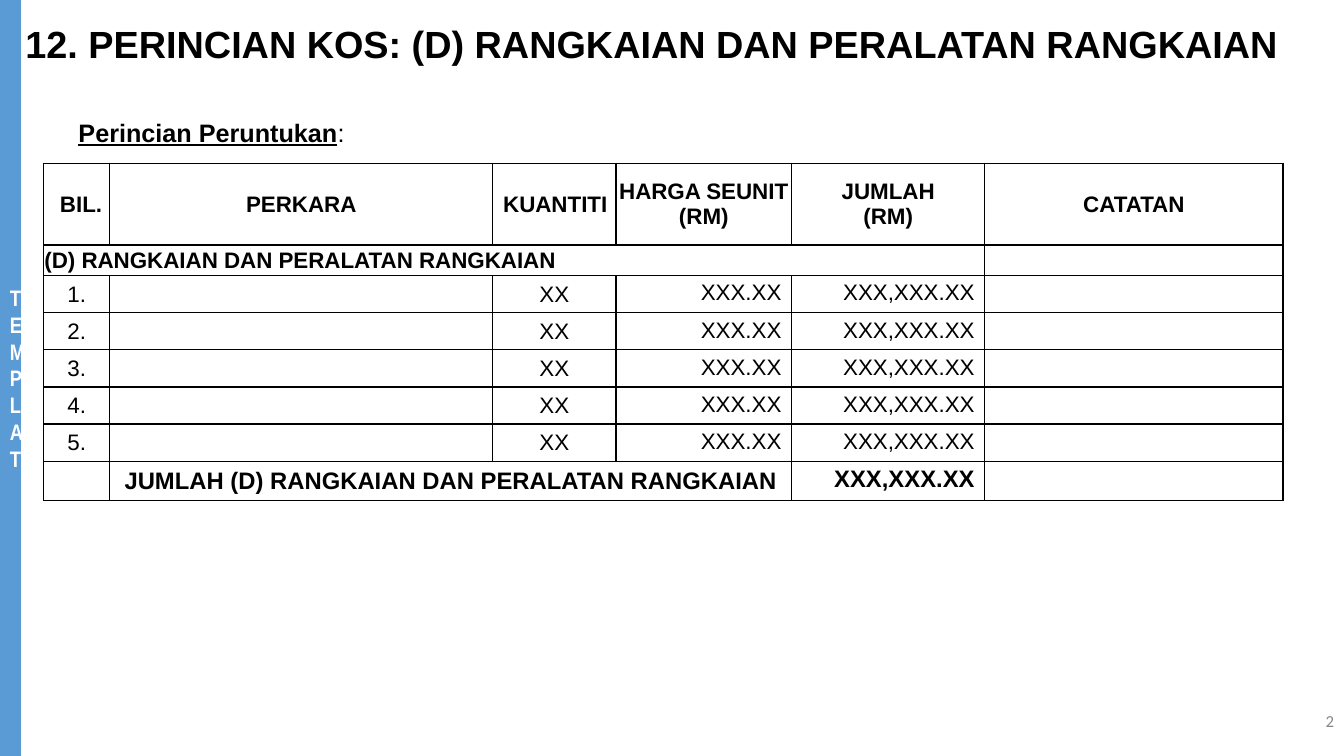
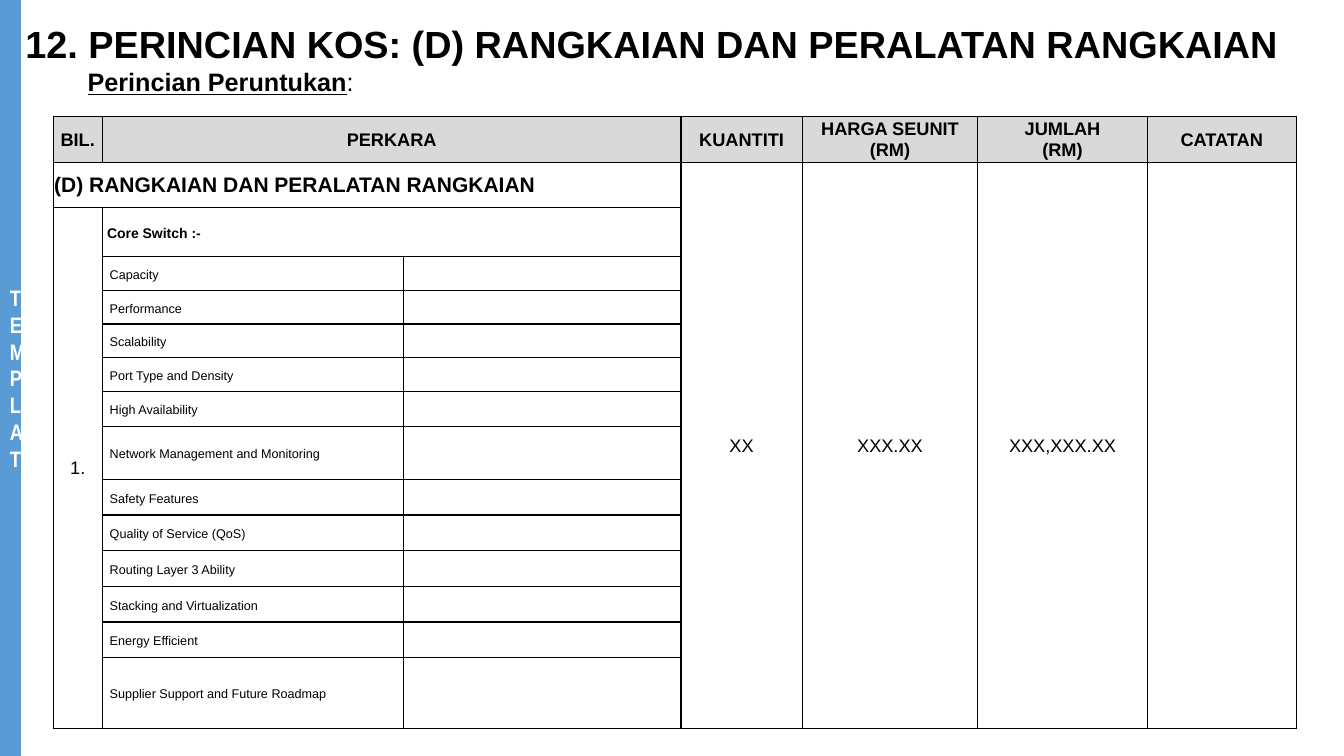
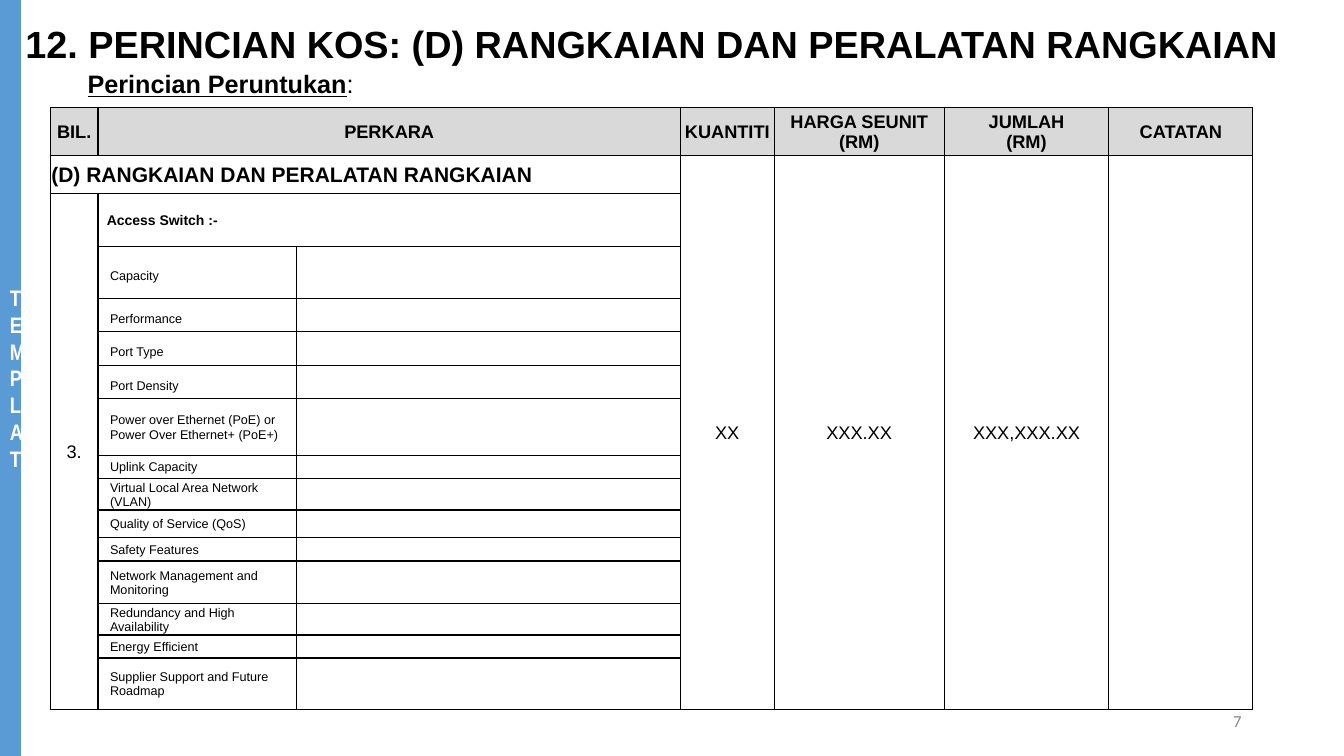
from lxml.etree import SubElement
from pptx import Presentation
from pptx.dml.color import RGBColor
from pptx.enum.shapes import MSO_SHAPE
from pptx.enum.text import MSO_ANCHOR, MSO_AUTO_SIZE, PP_ALIGN
from pptx.oxml import parse_xml
from pptx.oxml.ns import nsdecls, qn
from pptx.util import Pt

BLUE = RGBColor(0x5B, 0x9B, 0xD5)
WHITE = RGBColor(0xFF, 0xFF, 0xFF)
BLACK = RGBColor(0, 0, 0)
HEADER_GREY = RGBColor(0xD9, 0xD9, 0xD9)
PAGE_GREY = RGBColor(0x88, 0x88, 0x88)

SECTION = "(D) RANGKAIAN DAN PERALATAN RANGKAIAN"
TITLE = "12. PERINCIAN KOS: " + SECTION
HEADERS = ["BIL.", "PERKARA", "KUANTITI", "HARGA SEUNIT\n(RM)", "JUMLAH\n(RM)", "CATATAN"]
AMOUNTS = ["XX", "XXX.XX", "XXX,XXX.XX"]


def write(tf, text, size, bold=False, align=PP_ALIGN.CENTER, color=BLACK, font="Arial"):
    """Fill a text frame, one paragraph per line of text; return the last run."""
    for i, line in enumerate(text.split("\n")):
        p = tf.add_paragraph() if i else tf.paragraphs[0]
        p.alignment = align
        r = p.add_run()
        r.text = line
        r.font.name, r.font.size, r.font.bold = font, Pt(size), bold
        r.font.color.rgb = color
    return r


def add_grid(s, left, top, cols, rows):
    """Add a white table with thin black borders and tight margins."""
    frame = s.shapes.add_table(len(rows), len(cols), Pt(left), Pt(top), Pt(sum(cols)), Pt(sum(rows)))
    table = frame.table
    table.first_row = table.horz_banding = False
    for col, width in zip(table.columns, cols):
        col.width = Pt(width)
    for row, height in zip(table.rows, rows):
        row.height = Pt(height)
    for cell in table.iter_cells():
        cell.vertical_anchor = MSO_ANCHOR.MIDDLE
        cell.margin_left = cell.margin_right = cell.margin_top = Pt(0.7)
        cell.margin_bottom = 0
        cell.fill.solid()
        cell.fill.fore_color.rgb = WHITE
        # Keeps empty cells from stretching the low rows
        SubElement(cell.text_frame.paragraphs[0]._p, qn("a:endParaRPr"), sz="900")
        for i, side in enumerate("LRTB"):
            cell._tc.tcPr.insert(i, parse_xml(
                f'<a:ln{side} {nsdecls("a")} w="12700"><a:solidFill>'
                f'<a:srgbClr val="{BLACK}"/></a:solidFill></a:ln{side}>'))
    return table


prs = Presentation()
prs.slide_width, prs.slide_height = Pt(960), Pt(540)
layout = prs.slide_layouts[5]

# Shared parts: title, subtitle and page number; (subtitle left, top, page left, page)
slides = []
for sub_left, sub_top, page_left, page in [(49, 80, 744, "2"), (55.5, 44, None, None),
                                           (55.5, 45.5, 678, "7")]:
    s = prs.slides.add_slide(layout)
    slides.append(s)

    title = s.shapes.title
    title.left, title.top, title.width, title.height = Pt(11), Pt(11), Pt(970), Pt(58)
    tf = title.text_frame
    tf.auto_size = MSO_AUTO_SIZE.NONE
    tf.vertical_anchor = MSO_ANCHOR.TOP
    write(tf, TITLE, 27, True, PP_ALIGN.LEFT)

    tf = s.shapes.add_textbox(Pt(sub_left), Pt(sub_top), Pt(601), Pt(29)).text_frame
    tf.word_wrap = True
    write(tf, "Perincian Peruntukan", 18, True, PP_ALIGN.LEFT).font.underline = True
    write(tf, ":", 18, False, PP_ALIGN.LEFT)

    if page:
        tf = s.shapes.add_textbox(Pt(page_left), Pt(500), Pt(216), Pt(29)).text_frame
        tf.word_wrap = True
        tf.vertical_anchor = MSO_ANCHOR.MIDDLE
        write(tf, page, 12, False, PP_ALIGN.RIGHT, PAGE_GREY, "Calibri")

# Side band, moved into the layout so that every slide shows it
band = slides[0].shapes.add_shape(MSO_SHAPE.RECTANGLE, 0, 0, Pt(15), Pt(540))
band.shadow.inherit = False
band.fill.solid()
band.fill.fore_color.rgb = BLUE
band.line.fill.background()
band.text_frame.word_wrap = True
band.text_frame.vertical_anchor = MSO_ANCHOR.MIDDLE
write(band.text_frame, "TEMPLAT", 16, True, color=WHITE, font="Arial Narrow")
band.element.nvSpPr.cNvPr.set("id", "50")
layout.shapes.element.insert(2, band.element)

# Slide 1: cost summary
table = add_grid(slides[0], 31, 116.5, [47.5, 273.5, 88, 125.5, 138, 213],
                 [58.5, 22] + [26.5] * 5 + [28])
for c, text in enumerate(HEADERS):
    write(table.cell(0, c).text_frame, text, 16, True)
table.cell(0, 0).margin_left = Pt(7)
table.cell(0, 2).margin_left = Pt(2)
table.cell(1, 0).merge(table.cell(1, 4))
write(table.cell(1, 0).text_frame, SECTION, 16, True, PP_ALIGN.LEFT)
for row in range(2, 7):
    write(table.cell(row, 0).text_frame, f"{row - 1}.", 16)
    write(table.cell(row, 2).text_frame, AMOUNTS[0], 16)
    for c in (3, 4):
        write(table.cell(row, c).text_frame, AMOUNTS[c - 2], 16, align=PP_ALIGN.RIGHT)
table.cell(7, 1).merge(table.cell(7, 3))
write(table.cell(7, 1).text_frame, "JUMLAH " + SECTION, 17, True)
write(table.cell(7, 4).text_frame, AMOUNTS[2], 17, True, PP_ALIGN.RIGHT)
for row in range(2, 8):
    for c in (3, 4):
        cell = table.cell(row, c)
        cell.vertical_anchor = MSO_ANCHOR.TOP
        cell.margin_left = cell.margin_right = Pt(7.2)
        cell.margin_top = cell.margin_bottom = Pt(3.6)

# Slides 2 and 3: one item each, with its list of features
core_switch = dict(
    left=38, top=83, number="1.", item="Core Switch :-", item_indent=3.5, label_indent=5.4,
    cols=[35, 215, 198.5, 86.5, 125.5, 121, 106.5],
    rows=[33, 32.5, 35] + [24] * 4 + [25, 38] + [25.5] * 5 + [50.5],
    labels=["Capacity", "Performance", "Scalability", "Port Type and Density",
            "High Availability", "Network Management and Monitoring", "Safety Features",
            "Quality of Service (QoS)", "Routing Layer 3 Ability",
            "Stacking and Virtualization", "Energy Efficient",
            "Supplier Support and Future Roadmap"],
    spacing=[1.15] * 12, item_spacing=1.15, space_after=8)
access_switch = dict(
    left=36, top=77, number="3.", item="Access Switch :-", item_indent=6.3, label_indent=8.6,
    cols=[34, 142, 274, 67, 121.5, 117.5, 103],
    rows=[34, 27.5, 37.5, 37, 24, 24, 24, 40.5, 16.5, 22, 20, 16.5, 30.5, 22, 16.5, 36.5],
    labels=["Capacity", "Performance", "Port Type", "Port Density",
            "Power over Ethernet (PoE) or Power Over Ethernet+ (PoE+)", "Uplink Capacity",
            "Virtual Local Area Network (VLAN)", "Quality of Service (QoS)",
            "Safety Features", "Network Management and Monitoring",
            "Redundancy and High Availability", "Energy Efficient",
            "Supplier Support and Future Roadmap"],
    spacing=[1.5] * 4 + [1] * 9, item_spacing=1, space_after=0)

for s, d in zip(slides[1:], [core_switch, access_switch]):
    table = add_grid(s, d["left"], d["top"], d["cols"], d["rows"])
    last = len(d["rows"]) - 1
    table.cell(0, 1).merge(table.cell(0, 2))
    table.cell(1, 0).merge(table.cell(1, 2))
    table.cell(2, 0).merge(table.cell(last, 0))
    table.cell(2, 1).merge(table.cell(2, 2))
    for c in range(3, 7):
        table.cell(1, c).merge(table.cell(last, c))

    for c, text in zip([0, 1, 3, 4, 5, 6], HEADERS):
        cell = table.cell(0, c)
        cell.fill.fore_color.rgb = HEADER_GREY
        write(cell.text_frame, text, 13, True)
    write(table.cell(1, 0).text_frame, SECTION, 15, True, PP_ALIGN.LEFT)
    write(table.cell(2, 0).text_frame, d["number"], 13)
    for c, text in enumerate(AMOUNTS, 3):
        write(table.cell(1, c).text_frame, text, 13)

    lines = zip([d["item"]] + d["labels"], [d["item_spacing"]] + d["spacing"])
    for row, (text, spacing) in enumerate(lines, 2):
        cell = table.cell(row, 1)
        is_item = row == 2
        cell.margin_left = Pt(d["item_indent"] if is_item else d["label_indent"])
        write(cell.text_frame, text, 10 if is_item else 9, is_item, PP_ALIGN.LEFT)
        p = cell.text_frame.paragraphs[0]
        p.line_spacing = spacing
        p.space_after = Pt(d["space_after"])

prs.save("out.pptx")
